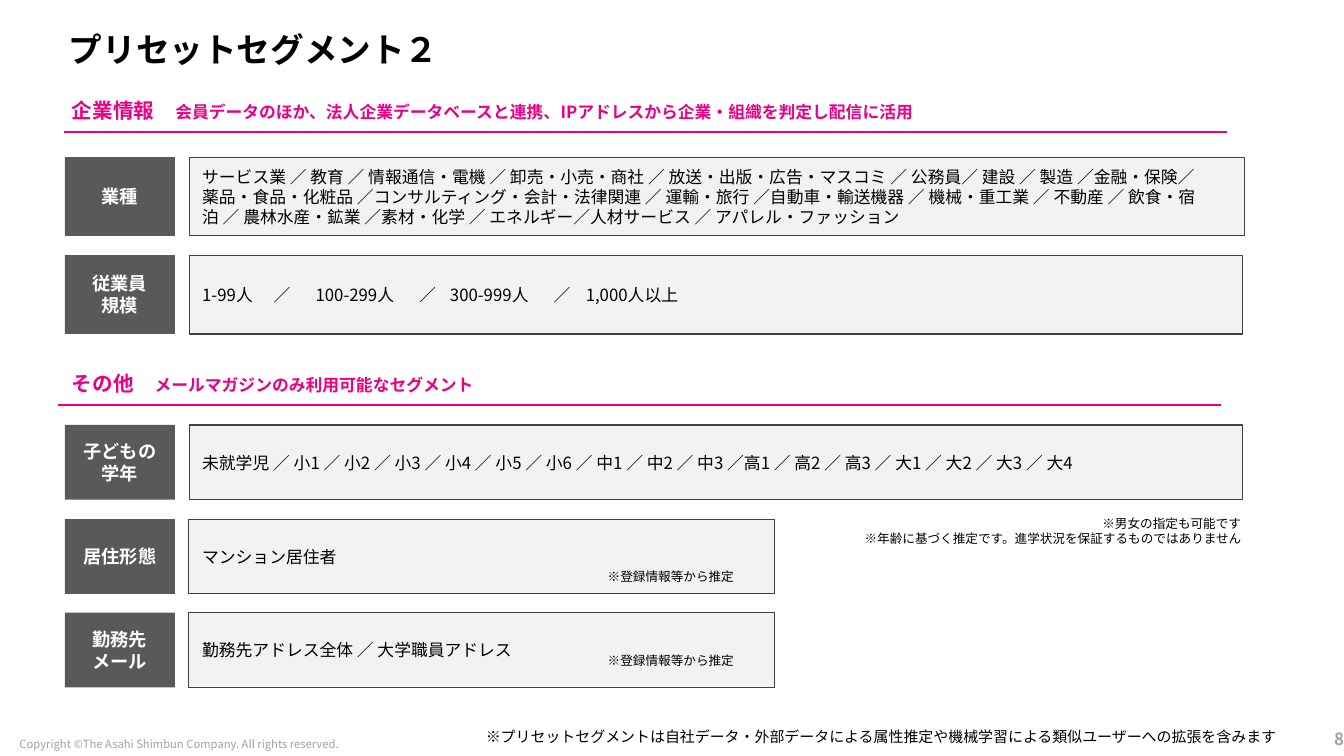
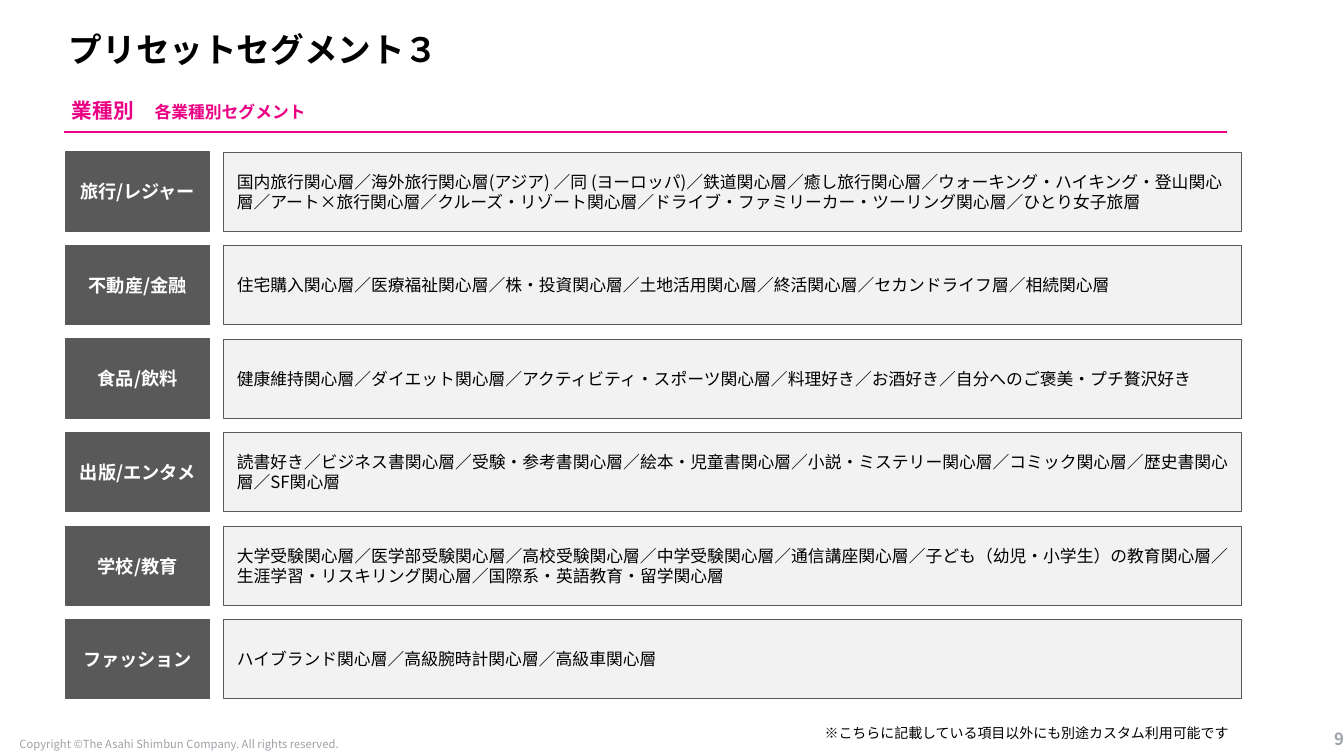
"""Build two slides that list preset audience segments."""
from lxml.etree import SubElement
from pptx import Presentation
from pptx.dml.color import RGBColor
from pptx.enum.shapes import MSO_CONNECTOR as Connector, MSO_SHAPE as Preset
from pptx.enum.text import MSO_ANCHOR as Anchor, MSO_AUTO_SIZE as AutoSize, PP_ALIGN as Align
from pptx.oxml.ns import qn
from pptx.util import Pt

FONT = "Noto Sans CJK JP"
PINK, DARK, PALE, EDGE = "EB0083", "595959", "F2F2F2", "404040"
BLACK, WHITE, GREY = "000000", "FFFFFF", "9FA1A8"


def paint(fill, colour):
    fill.solid()
    fill.fore_color.rgb = RGBColor.from_string(colour)


def write(shape, text, sizes=(12,), colour=BLACK, bold=False, align=Align.LEFT,
          anchor=Anchor.TOP, insets=(7.2, 3.6, 7.2, 3.6), spacing=1.0, stops=()):
    frame = shape.text_frame
    frame.word_wrap, frame.auto_size = True, AutoSize.NONE
    frame.vertical_anchor = anchor
    frame.margin_left, frame.margin_top, frame.margin_right, frame.margin_bottom = map(Pt, insets)
    for index, line in enumerate(text.split("\n")):
        paragraph = frame.add_paragraph() if index else frame.paragraphs[0]
        if stops:
            tab_list = SubElement(paragraph._p.get_or_add_pPr(), qn("a:tabLst"))
            for stop in stops:
                SubElement(tab_list, qn("a:tab"), pos=str(Pt(stop)), algn="l")
        paragraph.alignment, paragraph.line_spacing = align, spacing
        for piece, size in zip(line.split("|"), sizes):
            run = paragraph.add_run()
            run.text = piece
            run.font.name, run.font.size, run.font.bold = FONT, Pt(size), bold
            paint(run.font.fill, colour)
            SubElement(run._r.get_or_add_rPr(), qn("a:ea"), typeface=FONT)


company_rows = [
    ("業種", "サービス業 ／ 教育 ／ 情報通信・電機 ／ 卸売・小売・商社 ／ 放送・出版・広告・マスコミ ／ 公務員／ 建設 ／ 製造 ／金融・保険／\n"
     "薬品・食品・化粧品 ／コンサルティング・会計・法律関連 ／ 運輸・旅行 ／自動車・輸送機器 ／ 機械・重工業 ／ 不動産 ／ 飲食・宿泊 ／ "
     "農林水産・鉱業 ／素材・化学 ／ エネルギー／人材サービス ／ アパレル・ファッション", 112.2, 56.4, 754, 26, ()),
    ("従業員\n規模", "1-99人\t／\t100-299人\t／\t300-999人\t／\t1,000人以上", 182.2, 56.4, 752.5, 9,
     (51, 81, 155, 177, 251, 274)),
    ("子どもの学年", "未就学児 ／ 小1 ／ 小2 ／ 小3 ／ 小4 ／ 小5 ／ 小6 ／ 中1 ／ 中2 ／ 中3 ／高1 ／ 高2 ／ 高3 ／ "
     "大1 ／ 大2 ／ 大3 ／ 大4", 303.6, 53.4, 752.5, 9, ()),
    ("居住形態", "マンション居住者", 370.8, 53.4, 418.5, 9, ()),
    ("勤務先\nメール", "勤務先アドレス全体 ／ 大学職員アドレス", 437.6, 53.4, 418.5, 9, ()),
]
industry_segments = [
    ("旅行/レジャー", "国内旅行関心層／海外旅行関心層(アジア) ／同 (ヨーロッパ)／鉄道関心層／癒し旅行関心層／ウォーキング・ハイキング・登山関心層／"
     "アート×旅行関心層／クルーズ・リゾート関心層／ドライブ・ファミリーカー・ツーリング関心層／ひとり女子旅層"),
    ("不動産/金融", "住宅購入関心層／医療福祉関心層／株・投資関心層／土地活用関心層／終活関心層／セカンドライフ層／相続関心層"),
    ("食品/飲料", "健康維持関心層／ダイエット関心層／アクティビティ・スポーツ関心層／料理好き／お酒好き／自分へのご褒美・プチ贅沢好き"),
    ("出版/エンタメ", "読書好き／ビジネス書関心層／受験・参考書関心層／絵本・児童書関心層／小説・ミステリー関心層／コミック関心層／歴史書関心層／SF関心層"),
    ("学校/教育", "大学受験関心層／医学部受験関心層／高校受験関心層／中学受験関心層／通信講座関心層／子ども（幼児・小学生）の教育関心層／"
     "生涯学習・リスキリング関心層／国際系・英語教育・留学関心層"),
    ("ファッション", "ハイブランド関心層／高級腕時計関心層／高級車関心層"),
]
industry_rows = [(label, text, 108.7 + 66.8 * index, 56.4, 727.2, 9, ())
                 for index, (label, text) in enumerate(industry_segments)]

pages = [
    {
        "title": "プリセットセグメント２", "number": "8",
        "headings": [
            ("企業情報　|会員データのほか、法人企業データベースと連携、IPアドレスから企業・組織を判定し配信に活用", 60.5, 45.6),
            ("その他　|メールマガジンのみ利用可能なセグメント", 255.4, 41.2),
        ],
        "rows": company_rows, "label_left": 46.3, "label_width": 78.7, "label_inset": 9,
        "label_edge": None, "text_left": 135, "text_edge": EDGE,
        "notes": [
            ("※プリセットセグメントは自社データ・外部データによる属性推定や機械学習による類似ユーザーへの拡張を含みます",
             (334, 507, 609, 32), 10.7, 13, Align.LEFT),
            ("※登録情報等から推定", (427, 402.5, 120, 18), 9, 3.6, Align.LEFT),
            ("※登録情報等から推定", (427, 463, 120, 18), 9, 3.6, Align.LEFT),
            ("※男女の指定も可能です\n※年齢に基づく推定です。進学状況を保証するものではありません",
             (549.5, 365, 344, 29), 9, 3.6, Align.RIGHT),
        ],
    },
    {
        "title": "プリセットセグメント３", "number": "9",
        "headings": [("業種別　|各業種別セグメント", 60.5, 45.6)],
        "rows": industry_rows, "label_left": 46.8, "label_width": 103, "label_inset": 3,
        "label_edge": DARK, "text_left": 159.8, "text_edge": DARK,
        "notes": [("※こちらに記載している項目以外にも別途カスタム利用可能です",
                   (579.6, 508.3, 325, 32), 10, 9.4, Align.LEFT)],
    },
]

presentation = Presentation()
presentation.slide_width, presentation.slide_height = Pt(960), Pt(540)

for page in pages:
    slide = presentation.slides.add_slide(presentation.slide_layouts[5])
    shapes = slide.shapes
    title = shapes.title
    title.left, title.top, title.width, title.height = Pt(42), Pt(20), Pt(717), Pt(34)
    write(title, page["title"], sizes=(24,), bold=True, anchor=Anchor.MIDDLE, spacing=0.9)

    copyright_box = shapes.add_textbox(Pt(6.5), Pt(525.6), Pt(243.4), Pt(12.2))
    write(copyright_box, "Copyright ©The Asahi Shimbun Company. All rights reserved.", sizes=(8,),
          colour=GREY, align=Align.CENTER, anchor=Anchor.MIDDLE, insets=(0, 0, 0, 0))
    number_box = shapes.add_textbox(Pt(903.6), Pt(516.2), Pt(56.4), Pt(23.8))
    write(number_box, page["number"], colour=GREY, bold=True, align=Align.RIGHT,
          anchor=Anchor.MIDDLE, insets=(7.2, 3.6, 0, 3.6))

    for text, top, rule_left in page["headings"]:
        heading = shapes.add_textbox(Pt(42), Pt(top), Pt(822), Pt(56))
        write(heading, text, sizes=(14.7, 12), colour=PINK, bold=True, insets=(9.4,) * 4)
        rule_top = Pt(top + 33.6)
        rule = shapes.add_connector(Connector.STRAIGHT, Pt(rule_left), rule_top,
                                    Pt(rule_left + 830.8), rule_top)
        paint(rule.line.fill, PINK)
        rule.line.width = Pt(1.5)
        SubElement(rule._element.spPr, qn("a:effectLst"))

    label_inset = page["label_inset"]
    for label, text, top, height, width, right_inset, stops in page["rows"]:
        cells = [
            (label, page["label_left"], page["label_width"], DARK, page["label_edge"], 1,
             {"sizes": (13,), "colour": WHITE, "bold": True, "align": Align.CENTER,
              "insets": (label_inset, 9, label_inset, 9)}),
            (text, page["text_left"], width, PALE, page["text_edge"], 0.75,
             {"insets": (9.4, 9, right_inset, 9), "stops": stops}),
        ]
        for words, left, cell_width, fill, edge, edge_width, style in cells:
            cell = shapes.add_shape(Preset.RECTANGLE, Pt(left), Pt(top), Pt(cell_width), Pt(height))
            cell.shadow.inherit = False
            paint(cell.fill, fill)
            if edge:
                paint(cell.line.fill, edge)
                cell.line.width = Pt(edge_width)
            else:
                cell.line.fill.background()
            write(cell, words, anchor=Anchor.MIDDLE, **style)

    for text, (left, top, width, height), size, inset, align in page["notes"]:
        note = shapes.add_textbox(Pt(left), Pt(top), Pt(width), Pt(height))
        side = max(inset, 7.2)
        write(note, text, sizes=(size,), align=align, insets=(side, inset, side, inset))

presentation.save("out.pptx")
